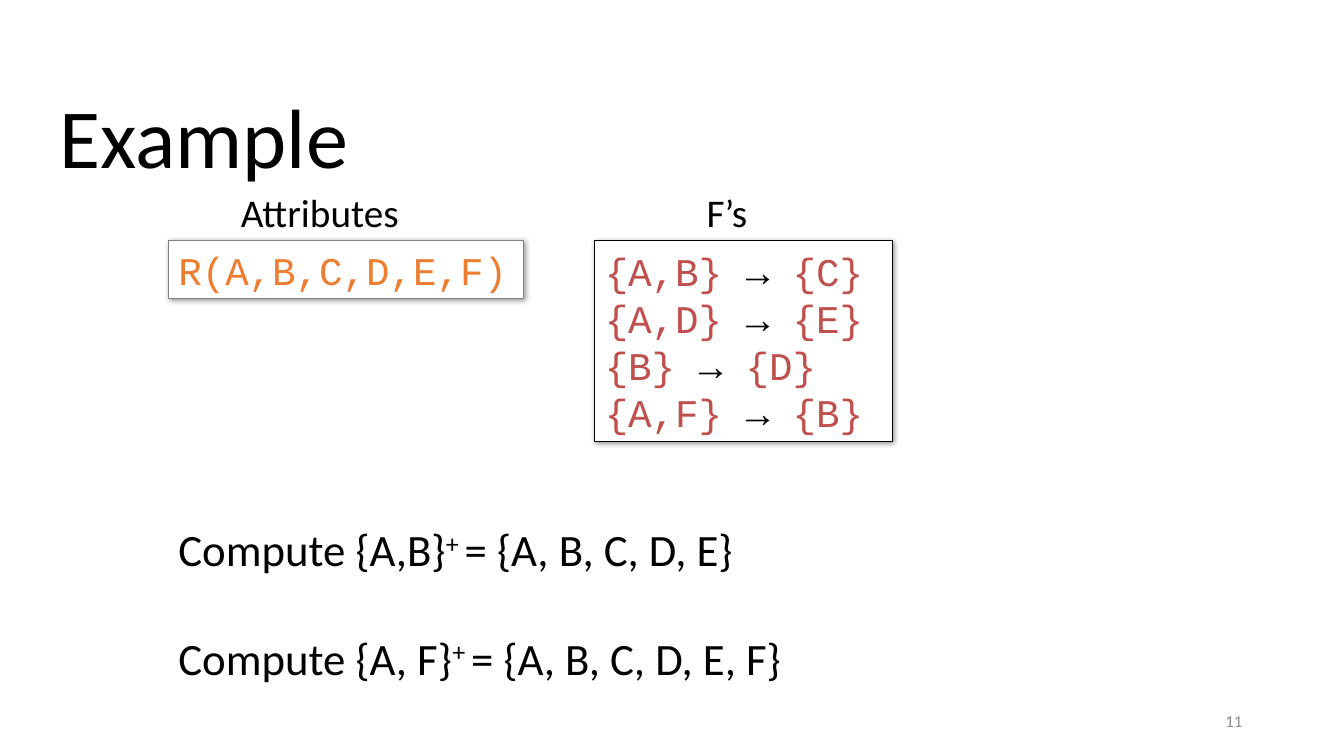
from lxml.etree import fromstring
from pptx import Presentation
from pptx.dml.color import RGBColor
from pptx.enum.shapes import MSO_SHAPE
from pptx.enum.text import MSO_ANCHOR, MSO_AUTO_SIZE, PP_ALIGN
from pptx.util import Inches, Pt

COLORS = {
    "text": "000000",
    "number": "8C8C8C",
    "paper": "FFFFFF",
    "relation_line": "808080",
    "relation": "ED7D31",
    "dependency": "C0504D",
}
BODY_FONT, CODE_FONT = "Calibri", "Courier New"
SHADOW = (
    '<a:effectLst xmlns:a="http://schemas.openxmlformats.org/drawingml/2006/main">'
    '<a:outerShdw blurRad="50800" dist="12700" dir="2700000" algn="tl" rotWithShape="0">'
    '<a:srgbClr val="000000"><a:alpha val="40000"/></a:srgbClr>'
    "</a:outerShdw></a:effectLst>"
)


def color(name):
    return RGBColor.from_string(COLORS[name])


def add_run(paragraph, text, size, color_name="text", font=BODY_FONT):
    run = paragraph.add_run()
    run.text = text
    run.font.size = Pt(size)
    run.font.name = font
    run.font.color.rgb = color(color_name)
    return run


def add_text_box(slide, left, top, width, height):
    text_box = slide.shapes.add_textbox(
        Inches(left), Inches(top), Inches(width), Inches(height))
    text_box.text_frame.word_wrap = False
    return text_box.text_frame


def add_code_box(slide, left, top, width, height, line_color):
    """White framed box with a soft shadow; returns its text frame."""
    box = slide.shapes.add_shape(
        MSO_SHAPE.RECTANGLE, Inches(left), Inches(top), Inches(width), Inches(height))
    box.fill.solid()
    box.fill.fore_color.rgb = color("paper")
    box.line.color.rgb = color(line_color)
    box.line.width = Pt(0.75)
    box._element.spPr.append(fromstring(SHADOW))
    box.text_frame.word_wrap = False
    return box.text_frame


def add_title(slide, left, top, width, height):
    title = slide.shapes.title
    title.left, title.top = Inches(left), Inches(top)
    title.width, title.height = Inches(width), Inches(height)
    text_frame = title.text_frame
    text_frame.auto_size = MSO_AUTO_SIZE.NONE
    text_frame.vertical_anchor = MSO_ANCHOR.BOTTOM
    paragraph = text_frame.paragraphs[0]
    paragraph.alignment = PP_ALIGN.LEFT
    paragraph.line_spacing = 0.9
    add_run(paragraph, "Example", 60)


def add_heading(slide, text, left, top, width):
    text_frame = add_text_box(slide, left, top, width, 0.57)
    add_run(text_frame.paragraphs[0], text, 28)


def add_attributes(slide, left, top, width, height):
    add_heading(slide, "Attributes", left + 0.62, top - 0.57, 1.79)
    text_frame = add_code_box(slide, left, top, width, height, "relation_line")
    text_frame.vertical_anchor = MSO_ANCHOR.TOP
    paragraph = text_frame.paragraphs[0]
    paragraph.alignment = PP_ALIGN.LEFT
    add_run(paragraph, "R(A,B,C,D,E,F)", 28, "relation", CODE_FONT)


def add_dependencies(slide, left, top, width, height):
    add_heading(slide, "F’s", left + 1.01, top - 0.57, 0.61)
    text_frame = add_code_box(slide, left, top, width, height, "text")
    text_frame.vertical_anchor = MSO_ANCHOR.MIDDLE
    dependencies = [("{A,B}", "{C}"), ("{A,D}", "{E}"), ("{B}", "{D}"), ("{A,F}", "{B}")]
    for index, (source, target) in enumerate(dependencies):
        paragraph = text_frame.add_paragraph() if index else text_frame.paragraphs[0]
        paragraph.alignment = PP_ALIGN.LEFT
        add_run(paragraph, source + " ", 28, "dependency", CODE_FONT)
        add_run(paragraph, "→", 28, "text", CODE_FONT)
        add_run(paragraph, " " + target, 28, "dependency", CODE_FONT)


def add_closures(slide, left, top, width, height):
    text_frame = add_text_box(slide, left, top, width, height)
    closures = [("{A,B}", "{A, B, C, D, E}"), ("{A, F}", "{A, B, C, D, E, F}")]
    for index, (attributes, closure) in enumerate(closures):
        paragraph = text_frame.add_paragraph() if index else text_frame.paragraphs[0]
        if index:
            paragraph.space_before = Pt(39)
        add_run(paragraph, "Compute " + attributes, 32)
        plus = add_run(paragraph, "+ ", 32)
        plus.font._element.set("baseline", "30000")
        add_run(paragraph, "= " + closure, 32)


def add_slide_number(slide, left, top, width, height):
    text_frame = add_text_box(slide, left, top, width, height)
    text_frame.word_wrap = True
    text_frame.vertical_anchor = MSO_ANCHOR.MIDDLE
    paragraph = text_frame.paragraphs[0]
    paragraph.alignment = PP_ALIGN.RIGHT
    add_run(paragraph, "11", 12, "number")


def main():
    presentation = Presentation()
    presentation.slide_width = Inches(13.33)
    presentation.slide_height = Inches(7.5)
    slide = presentation.slides.add_slide(presentation.slide_layouts[5])  # Title Only

    add_title(slide, 0.49, 0.77, 11.5, 1.13)
    add_slide_number(slide, 9.42, 6.95, 3, 0.4)
    add_closures(slide, 1.67, 5.13, 6.23, 1.72)
    add_attributes(slide, 1.67, 2.39, 3.52, 0.57)
    add_dependencies(slide, 5.9, 2.39, 2.95, 1.99)

    presentation.save("out.pptx")


if __name__ == "__main__":
    main()
